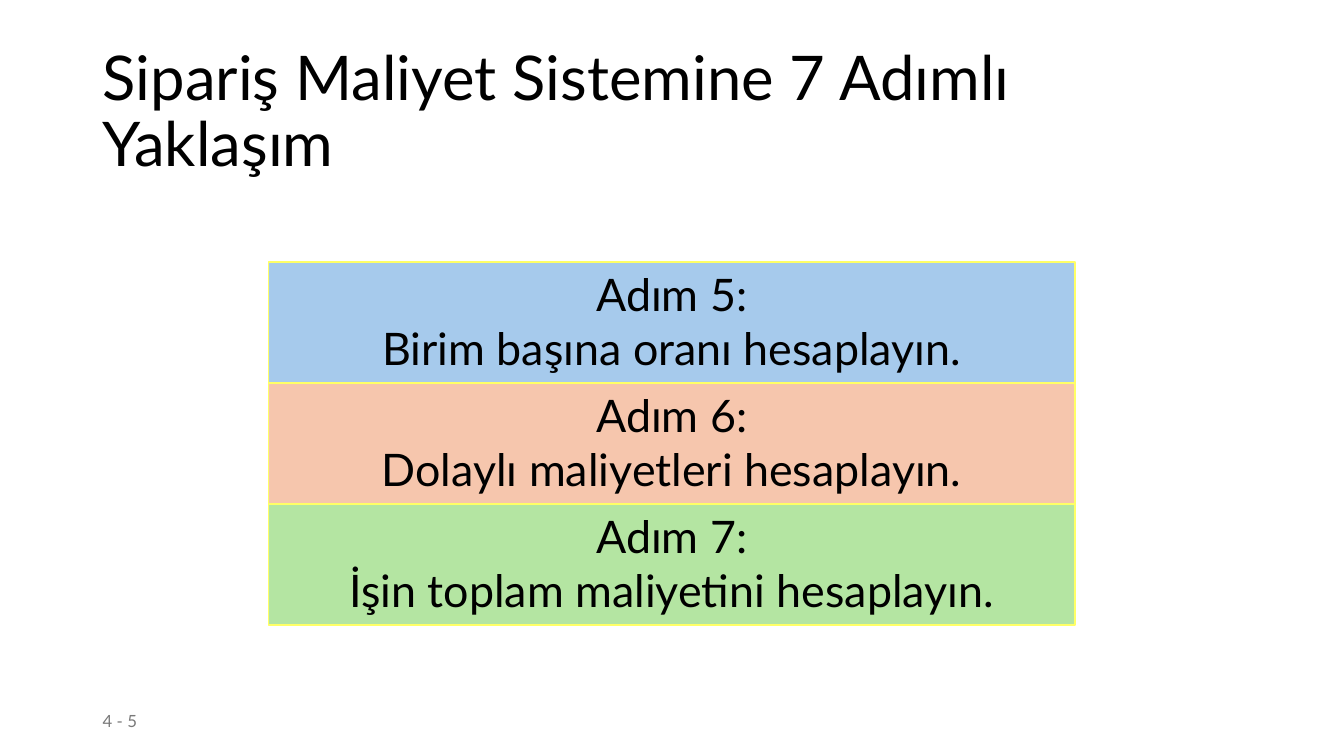
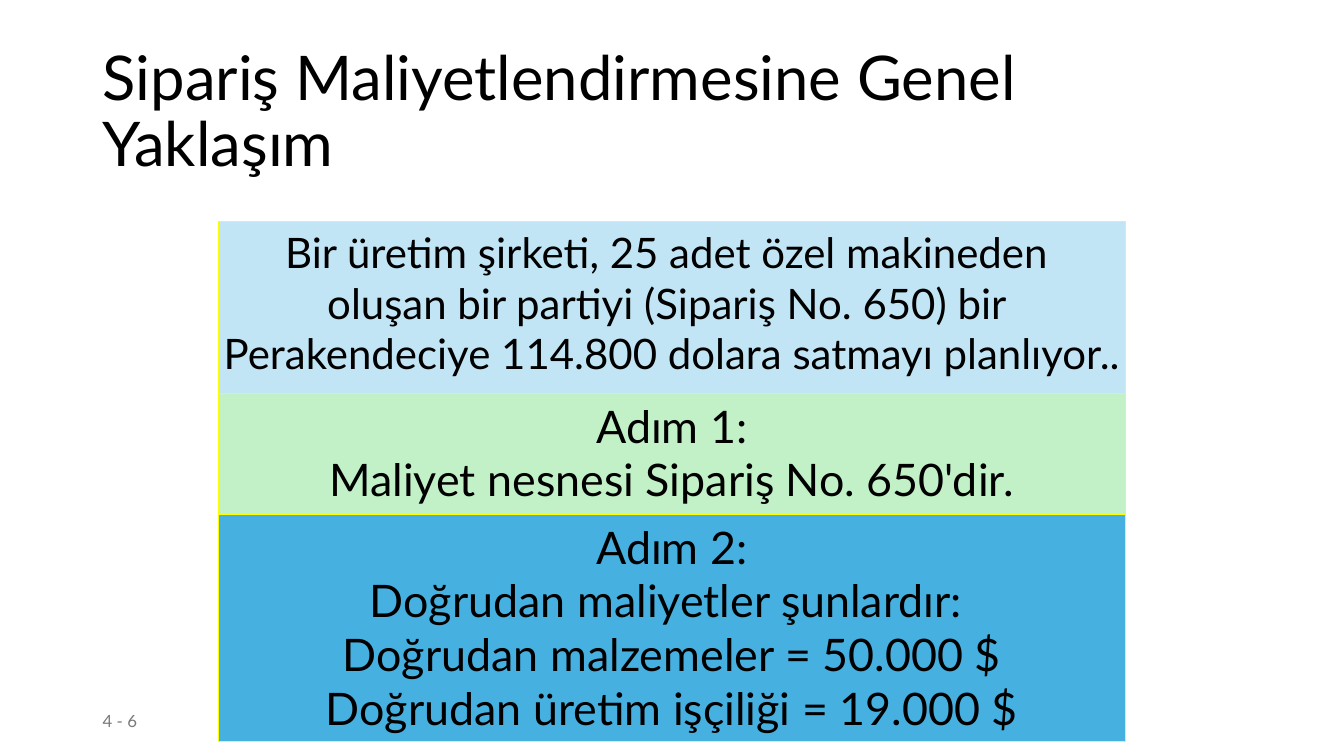
"""Build two slides on job costing with stacked step bands."""
from dataclasses import dataclass
from typing import NamedTuple

from pptx import Presentation
from pptx.dml.color import RGBColor
from pptx.enum.shapes import MSO_SHAPE as Preset
from pptx.enum.text import MSO_ANCHOR as Anchor, PP_ALIGN as Align
from pptx.util import Cm, Pt


@dataclass(frozen=True)
class Theme:
    """Colours, font and type sizes shared by the slides."""
    font: str = "Lato"
    text: str = "000000"
    muted: str = "797979"
    title_size: int = 44
    step_size: int = 32
    intro_size: int = 30
    number_size: int = 12
    title_spacing: float = 0.9
    line_width: int = 1


class Box(NamedTuple):
    """A region in centimetres."""
    left: float
    top: float
    width: float
    height: float

    def lengths(self):
        """Return the four sides as slide lengths."""
        return [Cm(side) for side in self]


class Band(NamedTuple):
    """One coloured band of a stack."""
    fill: str
    height: float
    lines: list
    size: int


THEME = Theme()
SLIDE_WIDTH, SLIDE_HEIGHT = 33.87, 19.05
TITLE_BOX = Box(2.34, 1.02, 29.21, 3.68)
NUMBER_BOX = Box(2.34, 17.65, 7.62, 1.02)
STEP_HEIGHT = 3.05

SLIDES = [
    {
        "title": "Sipariş Maliyet Sistemine 7 Adımlı Yaklaşım",
        "number": "4 - 5",
        "top": 6.6,
        "width": 20.32,
        "line": "FFFF66",
        "bands": [
            Band("A6CAEC", STEP_HEIGHT, ["Adım 5:", "Birim başına oranı hesaplayın."],
                 THEME.step_size),
            Band("F6C6AD", STEP_HEIGHT, ["Adım 6:", "Dolaylı maliyetleri hesaplayın."],
                 THEME.step_size),
            Band("B4E5A2", STEP_HEIGHT, ["Adım 7:", "İşin toplam maliyetini hesaplayın."],
                 THEME.step_size),
        ],
    },
    {
        "title": "Sipariş Maliyetlendirmesine Genel Yaklaşım",
        "number": "4 - 6",
        "top": 5.59,
        "width": 22.86,
        "line": "FFFF00",
        "bands": [
            Band("C1E5F5", 4.32, ["Bir üretim şirketi, 25 adet özel makineden ",
                                  "oluşan bir partiyi (Sipariş No. 650) bir ",
                                  "Perakendeciye 114.800 dolara satmayı planlıyor.."],
                 THEME.intro_size),
            Band("C2F1C8", STEP_HEIGHT, ["Adım 1:", "Maliyet nesnesi Sipariş No. 650'dir."],
                 THEME.step_size),
            Band("46B1E1", 5.72, ["Adım 2:", "Doğrudan maliyetler şunlardır: ",
                                  "Doğrudan malzemeler = 50.000 $",
                                  "Doğrudan üretim işçiliği = 19.000 $"],
                 THEME.step_size),
        ],
    },
]


def write_text(shape, lines, size, color, align, anchor, wrap, spacing=None):
    """Set the lines of a shape and format their runs."""
    frame = shape.text_frame
    frame.word_wrap = wrap
    frame.vertical_anchor = anchor
    frame.text = "\n".join(lines)
    for paragraph in frame.paragraphs:
        paragraph.alignment = align
        paragraph.line_spacing = spacing
        for run in paragraph.runs:
            run.font.name = THEME.font
            run.font.size = Pt(size)
            run.font.color.rgb = RGBColor.from_string(color)


def add_title(slide, box, title):
    """Place the slide title in its box."""
    shape = slide.shapes.add_textbox(*box.lengths())
    write_text(shape, [title], THEME.title_size, THEME.text, Align.LEFT,
               Anchor.MIDDLE, True, THEME.title_spacing)


def add_number(slide, box, number):
    """Place the chapter and page number in its box."""
    shape = slide.shapes.add_textbox(*box.lengths())
    write_text(shape, [number], THEME.number_size, THEME.muted, Align.LEFT,
               Anchor.MIDDLE, True)


def add_band(slide, box, band, line_color):
    """Draw one outlined band with centred text."""
    shape = slide.shapes.add_shape(Preset.RECTANGLE, *box.lengths())
    shape.shadow.inherit = False
    shape.fill.solid()
    shape.fill.fore_color.rgb = RGBColor.from_string(band.fill)
    shape.line.color.rgb = RGBColor.from_string(line_color)
    shape.line.width = Pt(THEME.line_width)
    write_text(shape, band.lines, band.size, THEME.text, Align.CENTER,
               Anchor.TOP, False)


def add_stack(slide, box, bands, line_color):
    """Stack the bands downwards from the top of the box."""
    top = box.top
    for band in bands:
        add_band(slide, Box(box.left, top, box.width, band.height), band, line_color)
        top += band.height


def add_step_slide(presentation, content):
    """Add a slide with a title, a number and a centred stack of bands."""
    slide = presentation.slides.add_slide(presentation.slide_layouts[6])
    add_number(slide, NUMBER_BOX, content["number"])
    add_title(slide, TITLE_BOX, content["title"])
    width, bands = content["width"], content["bands"]
    stack = Box((SLIDE_WIDTH - width) / 2, content["top"], width,
                sum(band.height for band in bands))
    add_stack(slide, stack, bands, content["line"])


def main():
    """Build and save the presentation."""
    presentation = Presentation()
    presentation.slide_width = Cm(SLIDE_WIDTH)
    presentation.slide_height = Cm(SLIDE_HEIGHT)
    for content in SLIDES:
        add_step_slide(presentation, content)
    presentation.save("out.pptx")


if __name__ == "__main__":
    main()
